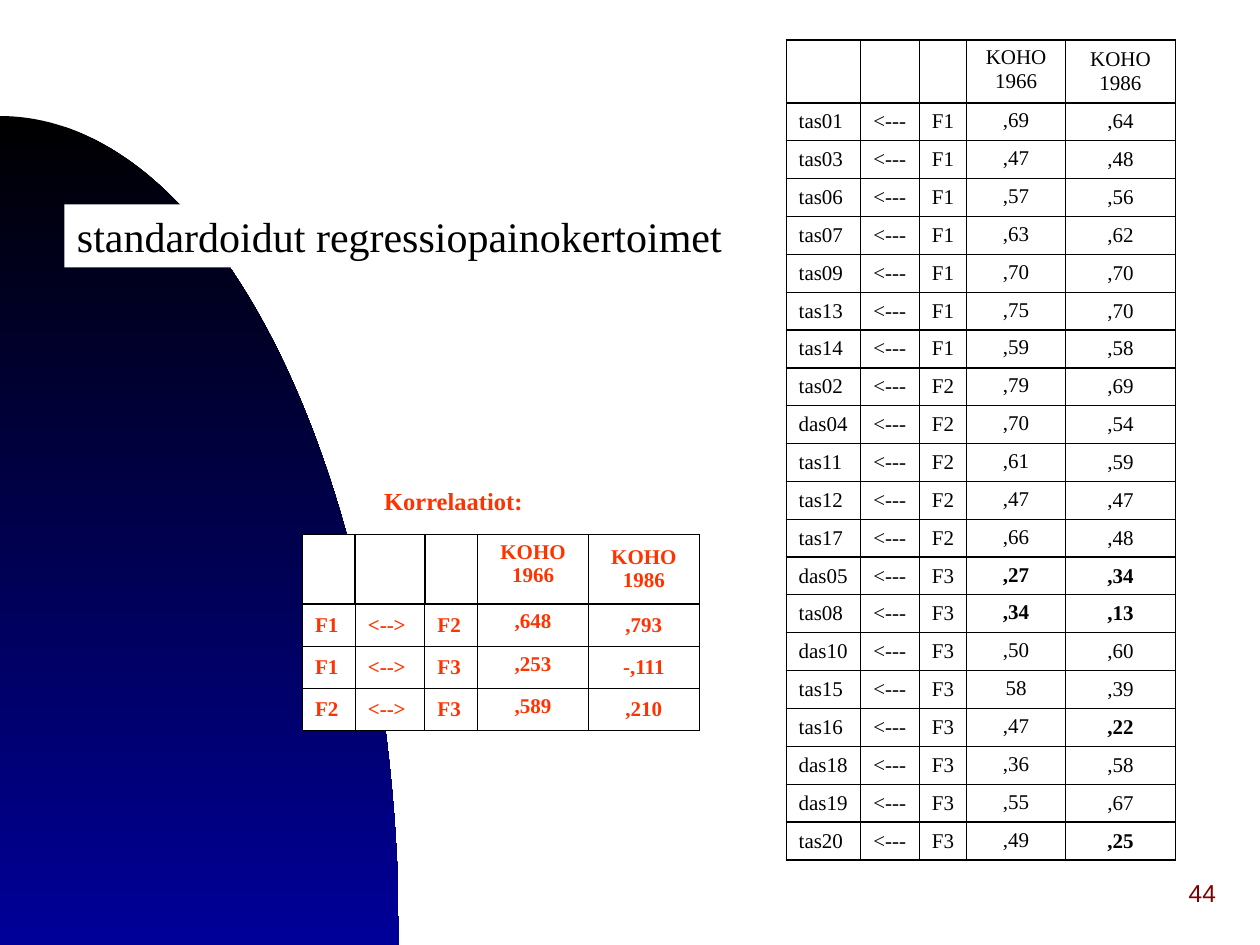
"""Build the slide of standardised regression weights and factor correlations."""
import dataclasses

import lxml.etree
import pptx
import pptx.dml.color
import pptx.enum.shapes
import pptx.enum.text
import pptx.oxml.ns
import pptx.util

Pt = pptx.util.Pt
qn = pptx.oxml.ns.qn
ALIGN = pptx.enum.text.PP_ALIGN
ANCHOR = pptx.enum.text.MSO_ANCHOR
SERIF = "Times New Roman"
HUES = {"ink": "000000", "paper": "FFFFFF", "red": "FF3300", "blue": "000099", "wine": "800000"}

HEAD = ["", "", "", "KOHO 1966", "KOHO 1986"]
LOADS = {
    "F1": """tas01 ,69 ,64
        tas03 ,47 ,48
        tas06 ,57 ,56
        tas07 ,63 ,62
        tas09 ,70 ,70
        tas13 ,75 ,70
        tas14 ,59 ,58""",
    "F2": """tas02 ,79 ,69
        das04 ,70 ,54
        tas11 ,61 ,59
        tas12 ,47 ,47
        tas17 ,66 ,48""",
    "F3": """das05 ,27 ,34
        tas08 ,34 ,13
        das10 ,50 ,60
        tas15 58 ,39
        tas16 ,47 ,22
        das18 ,36 ,58
        das19 ,55 ,67
        tas20 ,49 ,25""",
}
STRONG = {(13, 3), (13, 4), (14, 3), (14, 4), (17, 4), (20, 4)}
LINKS = [
    ["F1", "<-->", "F2", ",648", ",793"],
    ["F1", "<-->", "F3", ",253", "-,111"],
    ["F2", "<-->", "F3", ",589", ",210"],
]


@dataclasses.dataclass
class Style:
    """How a run of text looks."""
    size: float
    hue: str
    font: str = SERIF
    bold: bool = False


@dataclasses.dataclass
class Box:
    """A place on the slide, in points."""
    left: float
    top: float
    width: float
    height: float


@dataclasses.dataclass
class Grid:
    """A table with its sizes and the indices of its heavy rules."""
    left: float
    top: float
    cols: list[float]
    rows: list[float]
    text: list[list[str]]
    style: Style
    heavy_rows: set[int]
    heavy_cols: set[int] = dataclasses.field(default_factory=set)
    strong: set[tuple[int, int]] = dataclasses.field(default_factory=set)
    fill: str = ""


def tint(name: str) -> pptx.dml.color.RGBColor:
    """Return the named colour."""
    return pptx.dml.color.RGBColor.from_string(HUES[name])


def write(frame, text: str, style: Style, align=ALIGN.LEFT) -> None:
    """Add one styled run to the first paragraph."""
    line = frame.paragraphs[0]
    line.alignment = align
    run = line.add_run()
    run.text = text
    run.font.size, run.font.name, run.font.bold = Pt(style.size), style.font, style.bold
    run.font.color.rgb = tint(style.hue)


def place(shape, box: Box) -> None:
    """Move and size a shape."""
    shape.left, shape.top = Pt(box.left), Pt(box.top)
    shape.width, shape.height = Pt(box.width), Pt(box.height)


def draw_label(shape, box: Box, text: str, style: Style, anchor, align=ALIGN.LEFT, fill: str = "") -> None:
    """Place a text shape and fill in its words."""
    place(shape, box)
    frame = shape.text_frame
    frame.auto_size = pptx.enum.text.MSO_AUTO_SIZE.NONE
    frame.word_wrap = False
    frame.vertical_anchor = anchor
    if fill:
        shape.fill.solid()
        shape.fill.fore_color.rgb = tint(fill)
    write(frame, text, style, align)


def draw_curve(slide, box: Box, bend: float = 0.5523) -> None:
    """Draw a quarter ellipse that rises from the lower left corner."""
    wide, high = box.width, box.height
    pen = slide.shapes.build_freeform(0, Pt(box.top), scale=1.0)
    foot = box.top + high
    pen.add_line_segments([(Pt(wide), Pt(foot)), (0, Pt(foot))], close=True)
    curve = pen.convert_to_shape()
    edge = curve._element.xpath(".//a:lnTo")[0]
    edge.tag = qn("a:cubicBezTo")
    for spot, (x, y) in enumerate([(wide * bend, 0), (wide, high * (1 - bend))]):
        edge.insert(spot, lxml.etree.Element(qn("a:pt"), x=str(Pt(x)), y=str(Pt(y))))
    curve.shadow.inherit = False
    curve.line.fill.background()
    curve.fill.gradient()
    curve.fill.gradient_angle = 270
    for stop, hue, spot in zip(curve.fill.gradient_stops, ("ink", "blue"), (0, 1)):
        stop.color.rgb, stop.position = tint(hue), spot


def rule(cell, widths: dict[str, float]) -> None:
    """Set the borders of a cell, ahead of its fill."""
    props = cell._tc.get_or_add_tcPr()
    for spot, (side, width) in enumerate(widths.items()):
        line = lxml.etree.Element(qn(f"a:ln{side}"), w=str(Pt(width)))
        fill = lxml.etree.SubElement(line, qn("a:solidFill"))
        lxml.etree.SubElement(fill, qn("a:srgbClr"), val=HUES["ink"])
        props.insert(spot, line)


def draw_grid(slide, grid: Grid) -> None:
    """Draw a table."""
    frame = slide.shapes.add_table(
        len(grid.rows), len(grid.cols), Pt(grid.left), Pt(grid.top),
        Pt(sum(grid.cols)), Pt(sum(grid.rows)))
    table = frame.table
    table.first_row = table.horz_banding = False
    for col, width in zip(table.columns, grid.cols):
        col.width = Pt(width)
    for row, height in zip(table.rows, grid.rows):
        row.height = Pt(height)
    for r, line in enumerate(grid.text):
        for c, text in enumerate(line):
            cell = table.cell(r, c)
            cell.vertical_anchor = ANCHOR.TOP if c == 3 else ANCHOR.MIDDLE
            if grid.fill:
                cell.fill.solid()
                cell.fill.fore_color.rgb = tint(grid.fill)
            else:
                cell.fill.background()
            if text:
                bold = grid.style.bold or (r, c) in grid.strong
                write(cell.text_frame, text, dataclasses.replace(grid.style, bold=bold),
                      ALIGN.CENTER if c > 2 else ALIGN.LEFT)
            whole = r == 0 and bool(grid.heavy_cols)
            heavy = {"L": whole or c in grid.heavy_cols, "R": whole or c + 1 in grid.heavy_cols,
                     "T": r in grid.heavy_rows, "B": r + 1 in grid.heavy_rows}
            rule(cell, {side: 1 if thick else 0.75 for side, thick in heavy.items()})


def main() -> None:
    """Make and save the deck."""
    deck = pptx.Presentation()
    deck.slide_width, deck.slide_height = Pt(720), Pt(540)
    slide = deck.slides.add_slide(deck.slide_layouts[5])
    shapes = slide.shapes
    title = shapes.title
    draw_curve(slide, Box(0, 66.3, 228, 473.7))
    shapes._spTree.append(title._element)
    draw_label(shapes.add_textbox(0, 0, 0, 0), Box(552, 492, 150, 36), "44",
               Style(14, "wine", "Arial"), ANCHOR.MIDDLE, ALIGN.RIGHT)

    loads = [[name, "<---", factor, old, new]
             for factor, block in LOADS.items()
             for name, old, new in map(str.split, block.splitlines())]
    draw_grid(slide, Grid(
        449.2, 22.8, [42.7, 33.4, 27.2, 56.3, 63], [36] + [21.65] * len(loads), [HEAD] + loads,
        Style(12, "ink"), heavy_rows={0, 1, 8, 13, 21}, strong=STRONG))

    draw_label(title, Box(36.8, 116.8, 389, 36), "standardoidut regressiopainokertoimet",
               Style(24, "ink"), ANCHOR.MIDDLE, fill="paper")
    draw_label(shapes.add_textbox(0, 0, 0, 0), Box(212.4, 274.2, 113, 62.6), "Korrelaatiot:",
               Style(14, "red", bold=True), ANCHOR.TOP, fill="paper")
    draw_grid(slide, Grid(
        172.8, 305.3, [30.2, 39.8, 30.2, 63.3, 63.3], [39.8] + [24.1] * len(LINKS), [HEAD] + LINKS,
        Style(12, "red", bold=True), heavy_rows={0, 1, 4}, heavy_cols={0, 3, 5}, fill="paper"))
    deck.save("out.pptx")


if __name__ == "__main__":
    main()
